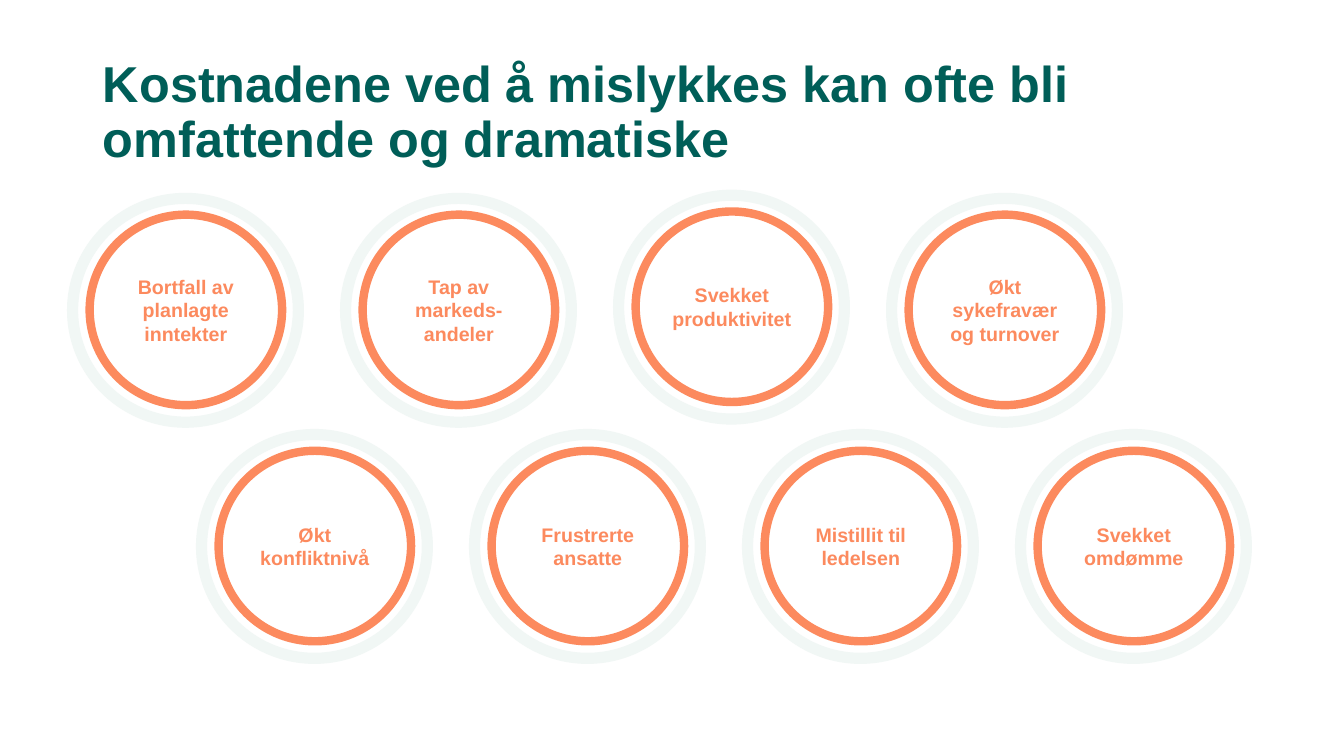
from dataclasses import dataclass

from pptx import Presentation
from pptx.dml.color import RGBColor
from pptx.enum.shapes import MSO_SHAPE
from pptx.enum.text import MSO_ANCHOR, MSO_AUTO_SIZE, PP_ALIGN
from pptx.shapes.group import GroupShape
from pptx.slide import Slide
from pptx.text.text import TextFrame
from pptx.util import Cm, Pt

GREEN = "005E58"
PALE = "F1F7F5"
CORAL = "FC8A5E"
PITCH = 6.88


@dataclass(frozen=True)
class Row:
    left: float
    top: float
    labels: tuple[str, ...]


@dataclass(frozen=True)
class Ring:
    dx: float
    dy: float
    width: float
    height: float
    color: str
    weight: float


ROWS = (
    Row(1.83, 5.0, ("Bortfall av planlagte inntekter", "Tap av markeds-andeler",
                    "Svekket produktivitet", "Økt sykefravær og turnover")),
    Row(5.08, 10.95, ("Økt konfliktnivå", "Frustrerte ansatte",
                      "Mistillit til ledelsen", "Svekket omdømme")),
)
RINGS = (
    Ring(0, 0, 5.69, 5.64, PALE, 8),
    Ring(0.43, 0.41, 4.85, 4.8, CORAL, 6),
)
LIFTS = {"Svekket produktivitet": 0.08}


def paint(code: str) -> RGBColor:
    return RGBColor.from_string(code)


def write(frame: TextFrame, text: str, size: float, color: str, align: PP_ALIGN) -> None:
    frame.word_wrap = True
    frame.auto_size = MSO_AUTO_SIZE.NONE
    frame.vertical_anchor = MSO_ANCHOR.MIDDLE
    frame.text = text
    line = frame.paragraphs[0]
    line.alignment = align
    font = line.font
    font.name = "Arial"
    font.size = Pt(size)
    font.bold = True
    font.color.rgb = paint(color)


def draw_ring(group: GroupShape, ring: Ring, left: float, top: float) -> None:
    shape = group.shapes.add_shape(
        MSO_SHAPE.OVAL, Cm(left + ring.dx), Cm(top + ring.dy),
        Cm(ring.width), Cm(ring.height))
    shape.shadow.inherit = False
    shape.fill.background()
    shape.line.color.rgb = paint(ring.color)
    shape.line.width = Pt(ring.weight)


def draw_badge(slide: Slide, text: str, left: float, top: float) -> None:
    """Draw one cost as a label inside two rings."""
    group = slide.shapes.add_group_shape()
    for ring in RINGS:
        draw_ring(group, ring, left, top)
    box = group.shapes.add_textbox(
        Cm(left + 1.09), Cm(top + 0.79), Cm(3.53), Cm(4.04))
    write(box.text_frame, text, 14, CORAL, PP_ALIGN.CENTER)


def draw_title(slide: Slide) -> None:
    title = slide.shapes.title
    title.left, title.top = Cm(2.34), Cm(1.68)
    title.width, title.height = Cm(29.21), Cm(2.36)
    write(title.text_frame,
          "Kostnadene ved å mislykkes kan ofte bli omfattende og dramatiske",
          36, GREEN, PP_ALIGN.LEFT)
    title.text_frame.paragraphs[0].line_spacing = 0.9


def main() -> None:
    deck = Presentation()
    deck.slide_width, deck.slide_height = Cm(33.87), Cm(19.05)
    slide = deck.slides.add_slide(deck.slide_layouts[5])
    draw_title(slide)
    for row in ROWS:
        for index, label in enumerate(row.labels):
            draw_badge(slide, label, row.left + index * PITCH,
                       row.top - LIFTS.get(label, 0))
    deck.save("out.pptx")


if __name__ == "__main__":
    main()
